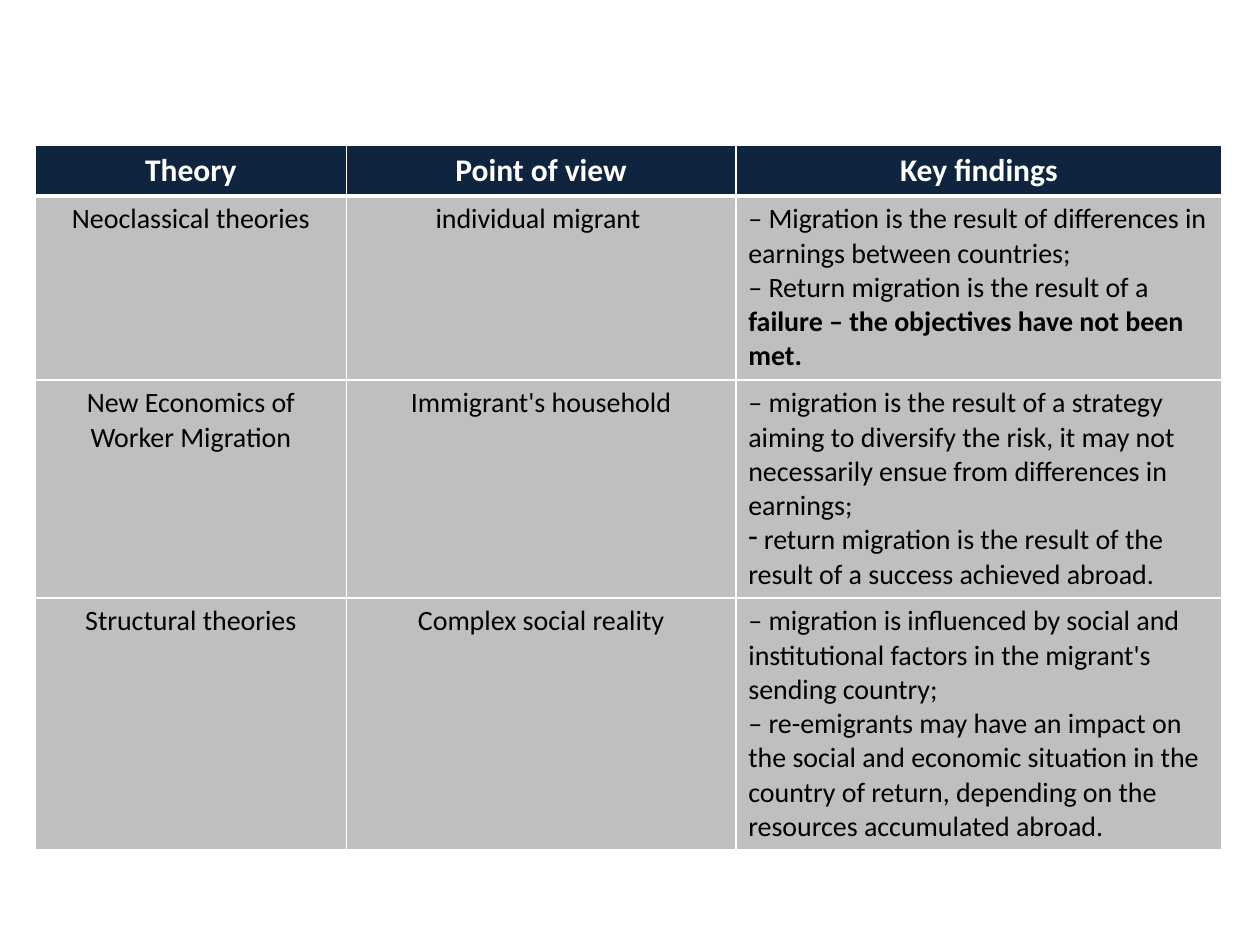
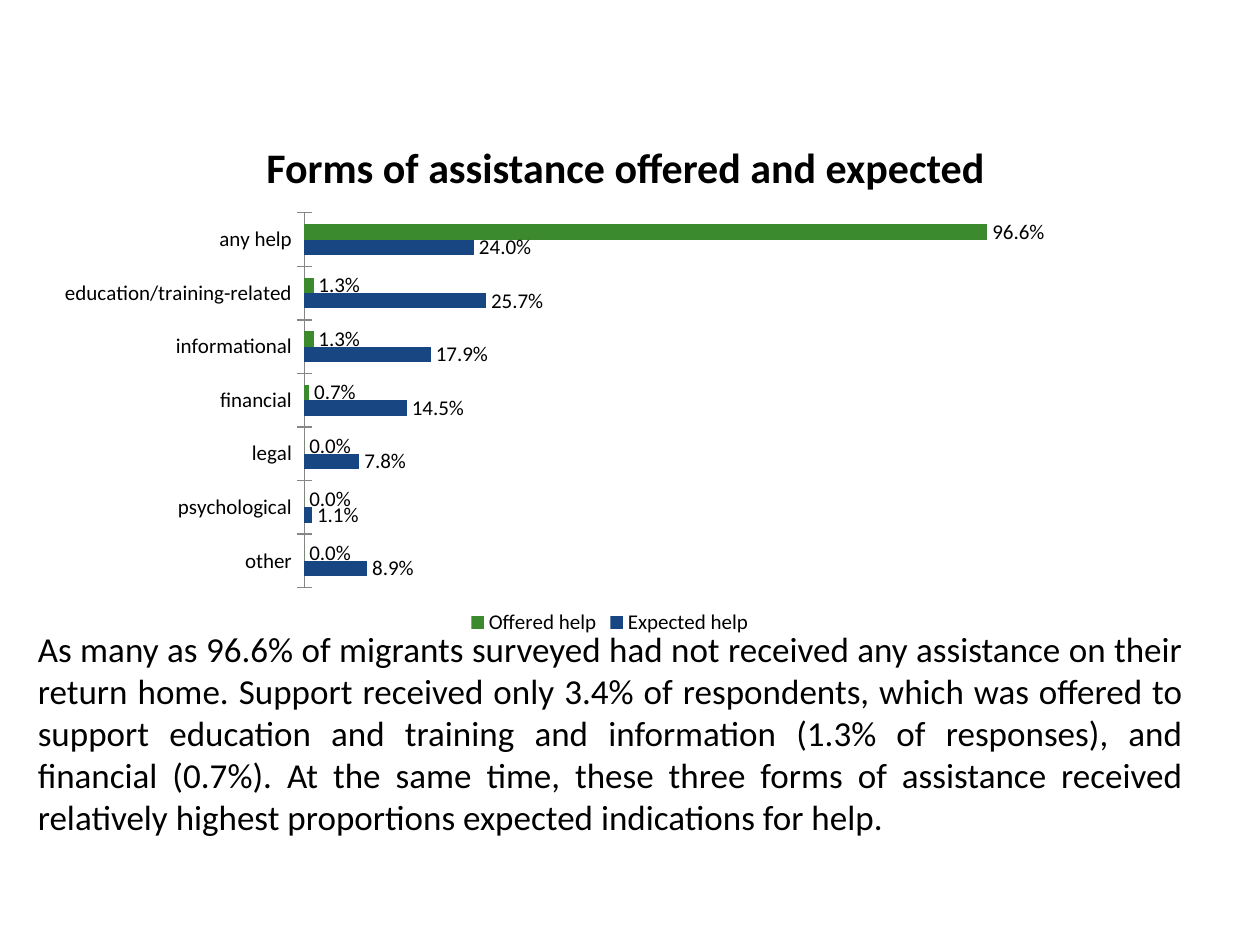
from lxml import etree
from pptx import Presentation
from pptx import util as u
from pptx.chart.data import CategoryChartData
from pptx.dml.color import RGBColor
from pptx.enum import chart as charts, text
from pptx.oxml import parse_xml
from pptx.oxml.ns import nsdecls, qn

WIDTH, HEIGHT = u.Inches(10), u.Inches(7.5)
FONT = "Calibri"
COLORS = {
    "text": "000000",
    "light": "FFFFFF",
    "header": "0F243E",
    "cell": "BFBFBF",
    "axis": "868686",
    "expected": "184683",
    "offered": "3C8A2E",
}

COLUMN_WIDTHS = (2.47, 3.09, 3.86)
ROW_HEIGHTS = (0.4, 1.46, 1.73, 1.99)
HEADERS = ("Theory", "Point of view", "Key findings")
# Each finding is a bullet mark (or None) and its runs as (text, bold).
THEORIES = (
    ("Neoclassical theories", "individual migrant ", (
        (None, [("– Migration is the result of differences in earnings between countries;", False)]),
        (None, [("– Return migration is the result of a ", False),
                ("failure – the objectives have not been met.", True)]),
    )),
    ("New Economics of Worker Migration", "Immigrant's household", (
        (None, [("– migration is the result of a strategy aiming to diversify the risk, "
                 "it may not necessarily ensue from differences in earnings;", False)]),
        ("-", [(" return migration is the result of the result of a success achieved abroad.", False)]),
    )),
    ("Structural theories", "Complex social reality", (
        (None, [("– migration is influenced by social and institutional factors in the "
                 "migrant's sending country;", False)]),
        (None, [("– re-emigrants may have an impact on the social and economic situation in the "
                 "country of return, depending on the resources accumulated abroad.", False)]),
    )),
)

HELP_FORMS = ("other", "psychological", "legal", "financial", "informational",
              "education/training-related", "any help")
HELP_SHARES = (
    ("Expected help", "expected", (0.089, 0.011, 0.078, 0.145, 0.179, 0.257, 0.24)),
    ("Offered help", "offered", (0, 0, 0, 0.007, 0.013, 0.013, 0.966)),
)
ASSISTANCE_SUMMARY = (
    "As many as 96.6% of migrants surveyed had not received any assistance on their return home. "
    "Support received only 3.4% of respondents, which was offered to support education and training "
    "and information (1.3% of responses), and financial (0.7%). At the same time, these three forms "
    "of assistance received relatively highest proportions expected indications for help."
)


def color(name):
    return RGBColor.from_string(COLORS[name])


def style_font(font, size, color_name="text", bold=False):
    font.name = FONT
    font.size = u.Pt(size)
    font.bold = bold
    font.color.rgb = color(color_name)


def write_paragraph(paragraph, runs, size, alignment, color_name="text", bullet=None):
    """Write (text, bold) runs without indent, with a bullet mark if one is given."""
    properties = paragraph._p.get_or_add_pPr()
    properties.set("marL", "0")
    properties.set("indent", "0")
    mark = etree.SubElement(properties, qn("a:buChar" if bullet else "a:buNone"))
    if bullet:
        mark.set("char", bullet)
    paragraph.alignment = alignment
    paragraph.space_before = u.Pt(0)
    for words, bold in runs:
        run = paragraph.add_run()
        run.text = words
        style_font(run.font, size, color_name, bold)


def set_borders(cell, top, bottom):
    """Draw light borders; top and bottom widths are in points."""
    properties = cell._tc.get_or_add_tcPr()
    widths = (("lnL", 1), ("lnR", 1), ("lnT", top), ("lnB", bottom))
    for position, (side, width) in enumerate(widths):
        properties.insert(position, parse_xml(
            f'<a:{side} {nsdecls("a")} w="{u.Pt(width)}"><a:solidFill>'
            f'<a:srgbClr val="{COLORS["light"]}"/></a:solidFill></a:{side}>'))


def fill_cell(cell, row, paragraphs, alignment):
    is_header = row == 0
    cell.fill.solid()
    cell.fill.fore_color.rgb = color("header" if is_header else "cell")
    set_borders(cell, top=3 if row == 1 else 1, bottom=3 if is_header else 1)
    frame = cell.text_frame
    for index, (bullet, runs) in enumerate(paragraphs):
        paragraph = frame.add_paragraph() if index else frame.paragraphs[0]
        write_paragraph(paragraph, runs, 18 if is_header else 16, alignment,
                        "light" if is_header else "text", bullet)


def add_theory_table(slide):
    frame = slide.shapes.add_table(
        len(ROW_HEIGHTS), len(COLUMN_WIDTHS), u.Inches(0.28), u.Inches(1.15),
        u.Inches(sum(COLUMN_WIDTHS)), u.Inches(sum(ROW_HEIGHTS)))
    table = frame.table
    table.horz_banding = False
    for column, width in zip(table.columns, COLUMN_WIDTHS):
        column.width = u.Inches(width)
    for row, height in zip(table.rows, ROW_HEIGHTS):
        row.height = u.Inches(height)
    for row, contents in enumerate((HEADERS, *THEORIES)):
        for column, content in enumerate(contents):
            is_label = isinstance(content, str)
            paragraphs = [(None, [(content, row == 0)])] if is_label else content
            alignment = text.PP_ALIGN.CENTER if is_label else text.PP_ALIGN.LEFT
            fill_cell(table.cell(row, column), row, paragraphs, alignment)


def fill_placeholder(placeholder, box, words, size, alignment, bold=False):
    """Place the placeholder at box, given as shares of the slide's size."""
    left, top, width, height = box
    placeholder.left, placeholder.top = int(left * WIDTH), int(top * HEIGHT)
    placeholder.width, placeholder.height = int(width * WIDTH), int(height * HEIGHT)
    frame = placeholder.text_frame
    frame.word_wrap = True
    frame.auto_size = text.MSO_AUTO_SIZE.NONE
    frame.vertical_anchor = text.MSO_ANCHOR.TOP
    write_paragraph(frame.paragraphs[0], [(words, bold)], size, alignment)


def set_plot_area(chart, **shares):
    """Fix the inner plot area as shares x, y, w, h of the chart."""
    plot_area = chart._chartSpace.chart.plotArea
    for layout in plot_area.findall(qn("c:layout")):
        plot_area.remove(layout)
    sizes = "".join(f'<c:{key} val="{value}"/>' for key, value in shares.items())
    plot_area.insert(0, parse_xml(
        f'<c:layout {nsdecls("c")}><c:manualLayout><c:layoutTarget val="inner"/>'
        f'<c:xMode val="edge"/><c:yMode val="edge"/>{sizes}</c:manualLayout></c:layout>'))


def add_assistance_chart(slide):
    data = CategoryChartData(number_format="0.0%")
    data.categories = HELP_FORMS
    for name, _, shares in HELP_SHARES:
        data.add_series(name, shares)
    chart = slide.shapes.add_chart(
        charts.XL_CHART_TYPE.BAR_CLUSTERED, u.Inches(0.35), u.Inches(1.62),
        u.Inches(8.98), u.Inches(3.46), data).chart
    style_font(chart.font, 10)
    chart.has_title = False
    chart.has_legend = True
    chart.legend.position = charts.XL_LEGEND_POSITION.BOTTOM
    chart.legend.include_in_layout = False
    style_font(chart.legend.font, 12)

    value_axis = chart.value_axis
    value_axis.visible = False
    value_axis.has_major_gridlines = False
    value_axis.minimum_scale, value_axis.maximum_scale = 0, 1.2
    category_axis = chart.category_axis
    category_axis.major_tick_mark = charts.XL_TICK_MARK.CROSS
    category_axis.format.line.color.rgb = color("axis")
    style_font(category_axis.tick_labels.font, 12)

    plot = chart.plots[0]
    plot.vary_by_categories = False
    plot.gap_width = 150
    for series, (_, color_name, _) in zip(plot.series, HELP_SHARES):
        series.format.fill.solid()
        series.format.fill.fore_color.rgb = color(color_name)
        labels = series.data_labels
        labels.show_value = True
        labels.number_format = "0.0%"
        labels.number_format_is_linked = False
        labels.position = charts.XL_LABEL_POSITION.OUTSIDE_END
        style_font(labels.font, 12)
    set_plot_area(chart, x=0.23, y=0.02, w=0.75, h=0.86)


def build_theory_slide(presentation):
    slide = presentation.slides.add_slide(presentation.slide_layouts.get_by_name("Blank"))
    add_theory_table(slide)


def build_assistance_slide(presentation):
    layout = presentation.slide_layouts.get_by_name("Title and Content")
    slide = presentation.slides.add_slide(layout)
    fill_placeholder(slide.shapes.title, (0.028, 0.143, 0.937, 0.067),
                     "Forms of assistance offered and expected", 24,
                     text.PP_ALIGN.CENTER, bold=True)
    fill_placeholder(slide.placeholders[1], (0.02, 0.657, 0.929, 0.237),
                     ASSISTANCE_SUMMARY, 20, text.PP_ALIGN.JUSTIFY)
    add_assistance_chart(slide)


def main():
    presentation = Presentation()
    presentation.slide_width, presentation.slide_height = WIDTH, HEIGHT
    build_theory_slide(presentation)
    build_assistance_slide(presentation)
    presentation.save("out.pptx")


if __name__ == "__main__":
    main()
